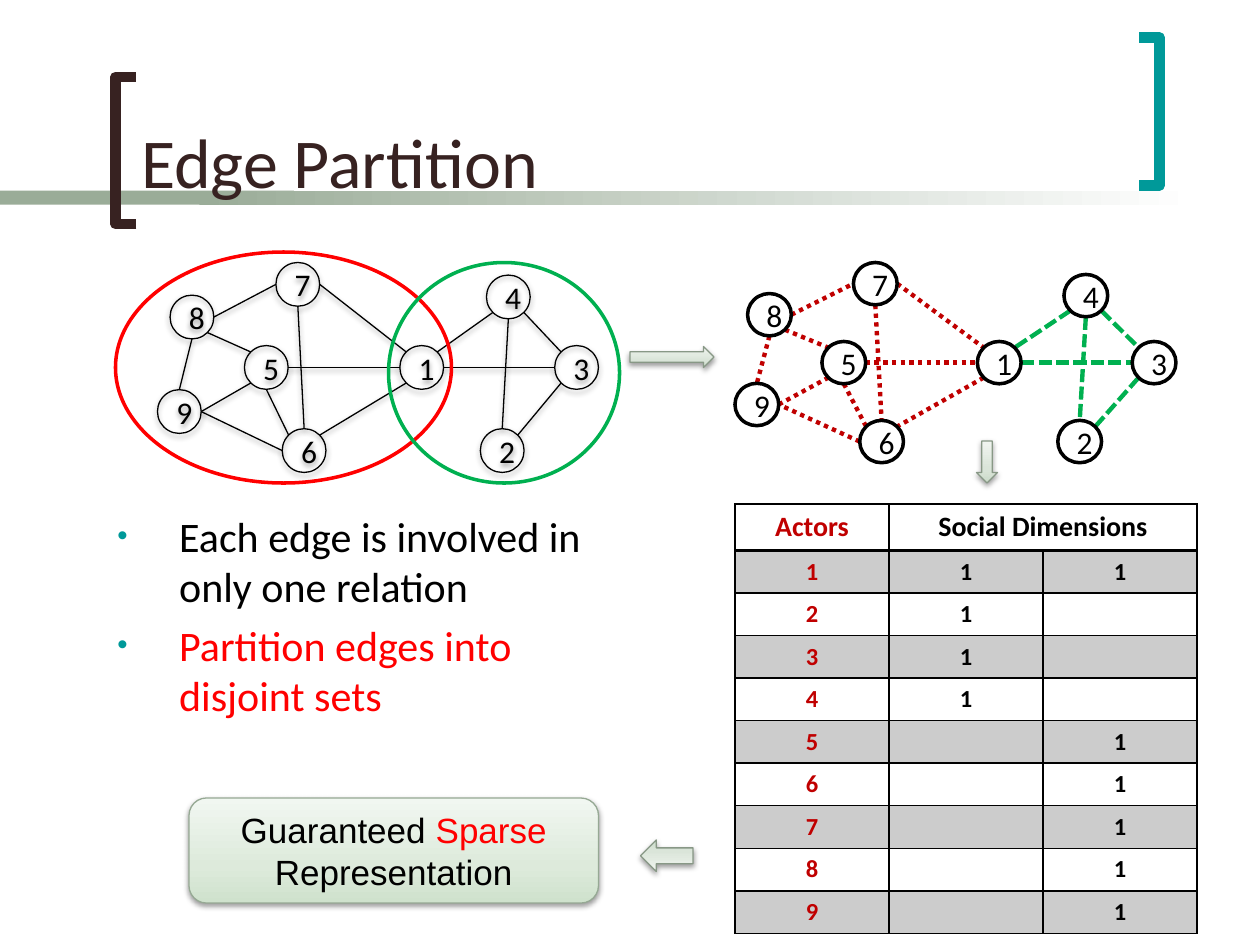
from dataclasses import dataclass
from math import cos, radians, sin

from lxml.etree import SubElement
from pptx import Presentation
from pptx.dml.color import RGBColor
from pptx.enum.dml import MSO_LINE as Dash
from pptx.enum.shapes import MSO_CONNECTOR as Connector, MSO_SHAPE as Shape
from pptx.enum.text import MSO_ANCHOR as Anchor, PP_ALIGN as Align
from pptx.oxml.ns import qn
from pptx.util import Pt


@dataclass(frozen=True)
class Theme:
    black: str = "000000"
    white: str = "FFFFFF"
    red: str = "FF0000"
    green: str = "00B050"
    dark_red: str = "C00000"
    brown: str = "372221"
    teal: str = "009999"
    sage: str = "9AAC98"
    arrow_line: str = "889886"
    box_line: str = "96A994"
    arrow_stops: tuple = ((0, "CBDAC9"), (35, "DAE5D9"), (100, "F1F5F0"))
    box_stops: tuple = ((0, "CFE2CD"), (35, "DDEADB"), (100, "F1F7F1"))
    font: str = "Calibri"
    box_font: str = "Arial"
    title: int = 40
    body: int = 24
    box: int = 20
    node: int = 18
    header: int = 16
    cell: int = 14


def apply(target, values):
    for name, value in values.items():
        setattr(target, name, value)


def add_xml(parent, tag, **attributes):
    return SubElement(parent, qn(tag), attributes)


class SlideBuilder:
    def __init__(self, slide, theme):
        self.shapes = slide.shapes
        self.theme = theme

    def outline(self, line, color, width, dash=None):
        line.color.rgb = RGBColor.from_string(color)
        apply(line, {"width": Pt(width), "dash_style": dash})

    def drop_shadow(self, effects):
        shadow = add_xml(effects, "a:outerShdw", blurRad=str(Pt(3.1)), dist=str(Pt(1.6)),
                         dir="5400000", rotWithShape="0")
        color = add_xml(shadow, "a:srgbClr", val=self.theme.black)
        add_xml(color, "a:alpha", val="38000")

    def gradient(self, fill, stops, angle):
        """Fill with (percent, colour) stops; the angle runs counter-clockwise."""
        fill.gradient()
        fill.gradient_angle = angle
        stop_list = fill._xPr.find(qn("a:gradFill")).find(qn("a:gsLst"))
        for old_stop in list(stop_list):
            stop_list.remove(old_stop)
        for percent, color in stops:
            stop = add_xml(stop_list, "a:gs", pos=str(percent * 1000))
            add_xml(stop, "a:srgbClr", val=color)

    def finish(self, shape, fill=None, angle=90, line=None, shadow=False):
        """Fill is None, a colour or gradient stops; line is (colour, width)."""
        if fill is None:
            shape.fill.background()
        elif isinstance(fill, str):
            shape.fill.solid()
            shape.fill.fore_color.rgb = RGBColor.from_string(fill)
        else:
            self.gradient(shape.fill, fill, angle)
        if line:
            self.outline(shape.line, *line)
        else:
            shape.line.fill.background()
        shape.shadow.inherit = False
        if shadow:
            self.drop_shadow(shape._element.spPr.find(qn("a:effectLst")))
        return shape

    def shape(self, kind, box, **look):
        return self.finish(self.shapes.add_shape(kind, *map(Pt, box)), **look)

    def bracket(self, points, color):
        start, *rest = [tuple(map(Pt, point)) for point in points]
        builder = self.shapes.build_freeform(*start)
        builder.add_line_segments(rest, close=False)
        self.finish(builder.convert_to_shape(), line=(color, 6))

    def add_runs(self, paragraph, runs, size, font=None, bold=False, align=None):
        paragraph.alignment = align
        for words, color in runs:
            run = paragraph.add_run()
            run.text = words
            apply(run.font, {"size": Pt(size), "name": font or self.theme.font, "bold": bold})
            run.font.color.rgb = RGBColor.from_string(color)

    def text_frame(self, box, anchor):
        frame = self.shapes.add_textbox(*map(Pt, box)).text_frame
        apply(frame, {"word_wrap": True, "vertical_anchor": anchor})
        return frame

    def title(self, words, box):
        frame = self.text_frame(box, Anchor.BOTTOM)
        self.add_runs(frame.paragraphs[0], [(words, self.theme.brown)], self.theme.title)

    def bullets(self, items, box):
        frame = self.text_frame(box, Anchor.TOP)
        for index, item in enumerate(items):
            paragraph = frame.add_paragraph() if index else frame.paragraphs[0]
            self.add_runs(paragraph, [item], self.theme.body)
            paragraph.space_before = Pt(4.8)
            properties = paragraph._p.get_or_add_pPr()
            properties.set("marL", str(Pt(35.3)))
            properties.set("indent", str(-Pt(35.3)))
            add_xml(add_xml(properties, "a:buClr"), "a:srgbClr", val=self.theme.teal)
            add_xml(properties, "a:buSzPct", val="70000")
            add_xml(properties, "a:buFont", typeface="Arial")
            add_xml(properties, "a:buChar", char="•")

    def edge(self, start, end, color, width, dash=None, shadow=False):
        line = self.shapes.add_connector(Connector.STRAIGHT, *map(Pt, (*start, *end)))
        self.outline(line.line, color, width, dash)
        effects = add_xml(line._element.spPr, "a:effectLst")
        if shadow:
            self.drop_shadow(effects)

    def graph(self, origin, node_height, y_scale, node_line, edge_look, shadow=False):
        """Draw the network; edge_look gives (colour, width, dash) for an edge's two actors."""
        boxes = {actor: (origin[0] + x, origin[1] + y * y_scale, 25, node_height)
                 for actor, (x, y) in NODES.items()}

        def site(actor, side):
            left, top, width, height = boxes[actor]
            angle = radians(SIDES[side])
            return left + width / 2 * (1 + cos(angle)), top + height / 2 * (1 + sin(angle))

        for first, first_side, second, second_side in EDGES:
            self.edge(site(first, first_side), site(second, second_side),
                      *edge_look({first, second}), shadow=shadow)
        for actor, box in boxes.items():
            node = self.shape(Shape.OVAL, box, line=(self.theme.black, node_line), shadow=shadow)
            node.text_frame.vertical_anchor = Anchor.MIDDLE
            self.add_runs(node.text_frame.paragraphs[0], [(str(actor), self.theme.black)],
                          self.theme.node, align=Align.CENTER)

    def cell(self, cell, words, color, size, shaded, bottom):
        apply(cell, {"margin_top": 0, "margin_bottom": 0, "vertical_anchor": Anchor.MIDDLE})
        if words:
            self.add_runs(cell.text_frame.paragraphs[0], [(words, color)], size,
                          bold=True, align=Align.CENTER)
        properties = cell._tc.get_or_add_tcPr()
        for tag, width in (("a:lnL", 1), ("a:lnR", 1), ("a:lnT", 1), ("a:lnB", bottom)):
            border = add_xml(properties, tag, w=str(Pt(width)))
            add_xml(add_xml(border, "a:solidFill"), "a:srgbClr", val=self.theme.black)
        if shaded:
            tint = add_xml(add_xml(properties, "a:solidFill"), "a:srgbClr", val=self.theme.black)
            add_xml(tint, "a:alpha", val="20000")
        else:
            cell.fill.background()

    def table(self, rows, box):
        table = self.shapes.add_table(len(rows), len(rows[0]), *map(Pt, box)).table
        for column in table.columns:
            column.width = Pt(box[2] / len(rows[0]))
        for r, row in enumerate(rows):
            table.rows[r].height = Pt(24.3 if r else 26.7)
            for c, words in enumerate(row):
                self.cell(table.cell(r, c), words,
                          self.theme.black if c else self.theme.dark_red,
                          self.theme.cell if r else self.theme.header,
                          shaded=r % 2 == 1, bottom=1 if r else 2)
        table.cell(0, 1).merge(table.cell(0, 2))


NODES = {5: (49.7, 47.5), 1: (138.5, 47.5), 3: (227, 47.5), 6: (71.3, 95), 7: (67.7, 0),
         2: (184.5, 95), 4: (188, 7.2), 9: (0, 72.7), 8: (7.2, 18.7)}
SIDES = {"E": 0, "SE": 45, "S": 90, "SW": 135, "W": 180, "NW": 225, "N": 270, "NE": 315}
EDGES = [(5, "E", 1, "W"), (1, "E", 3, "W"), (8, "E", 7, "W"), (7, "E", 1, "NW"),
         (1, "SW", 6, "NE"), (8, "SE", 5, "NW"), (9, "E", 5, "SW"), (6, "W", 9, "E"),
         (5, "S", 6, "NW"), (7, "S", 6, "N"), (4, "SE", 3, "NW"), (4, "SW", 1, "NE"),
         (4, "S", 2, "N"), (2, "NE", 3, "SW"), (8, "S", 9, "N")]
GREEN_GROUP = {1, 2, 3, 4}


def main():
    deck = Presentation()
    apply(deck, {"slide_width": Pt(720), "slide_height": Pt(540)})
    theme = Theme()
    page = SlideBuilder(deck.slides.add_slide(deck.slide_layouts[6]), theme)

    page.shape(Shape.RECTANGLE, (0, 109, 168, 8), fill=theme.sage)
    page.shape(Shape.RECTANGLE, (114, 109, 570, 8), angle=0,
               fill=((0, theme.sage), (100, theme.white)))
    page.bracket([(78, 128), (66, 128), (66, 44), (78, 44)], theme.brown)
    page.bracket([(651, 21.5), (662.5, 21.5), (662.5, 106), (651, 106)], theme.teal)
    page.title("Edge Partition", (73.5, 8, 564, 111.5))

    page.graph((90, 150), 25, 1, 0.75, lambda actors: (theme.black, 0.75), shadow=True)
    page.graph((420, 150), 24.2, 0.95, 2,
               lambda actors: (theme.green, 2.5, Dash.SQUARE_DOT) if actors <= GREEN_GROUP
               else (theme.dark_red, 2.5, Dash.ROUND_DOT))
    page.shape(Shape.OVAL, (66, 144, 192, 132), line=(theme.red, 2))
    page.shape(Shape.OVAL, (222, 150, 132, 126), line=(theme.green, 2))

    page.bullets([("Each edge is involved in only one relation", theme.black),
                  ("Partition edges into disjoint sets", theme.red)], (60, 288, 294, 144))
    memberships = [(str(actor), "1" if actor <= 4 else "", "1" if actor in (1, *range(5, 10)) else "")
                   for actor in range(1, 10)]
    page.table([("Actors", "Social Dimensions", ""), *memberships], (420, 288, 264, 245.4))

    for kind, box, turn in ((Shape.RIGHT_ARROW, (360, 198, 48, 12), 0),
                            (Shape.DOWN_ARROW, (558, 252, 12, 24), 0),
                            (Shape.RIGHT_ARROW, (366, 480, 30, 18), 180)):
        arrow = page.shape(kind, box, fill=theme.arrow_stops,
                           line=(theme.arrow_line, 0.75), shadow=True)
        arrow.rotation = turn
    result = page.shape(Shape.ROUNDED_RECTANGLE, (108, 456, 234, 60), fill=theme.box_stops,
                        line=(theme.box_line, 0.75), shadow=True)
    page.add_runs(result.text_frame.paragraphs[0],
                  [("Guaranteed ", theme.black), ("Sparse", theme.red),
                   (" Representation", theme.black)],
                  theme.box, theme.box_font, align=Align.CENTER)
    deck.save("out.pptx")


if __name__ == "__main__":
    main()
